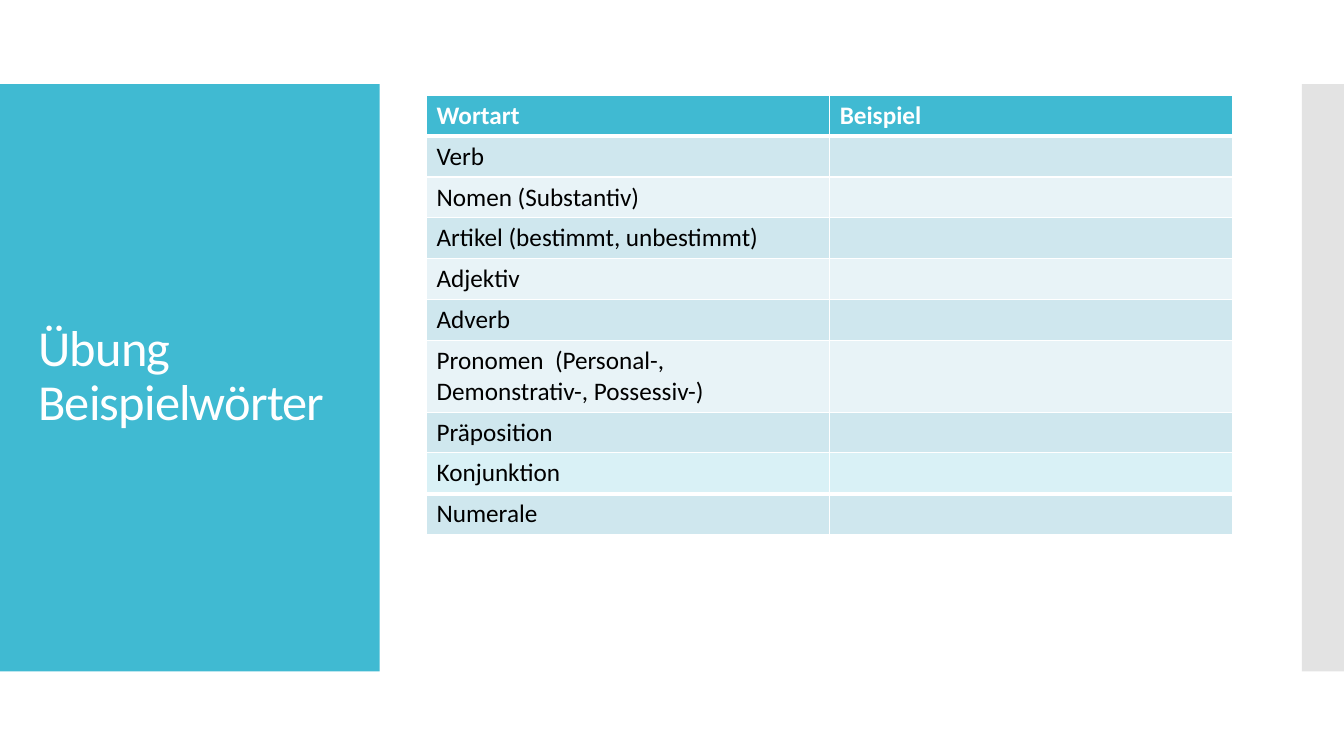
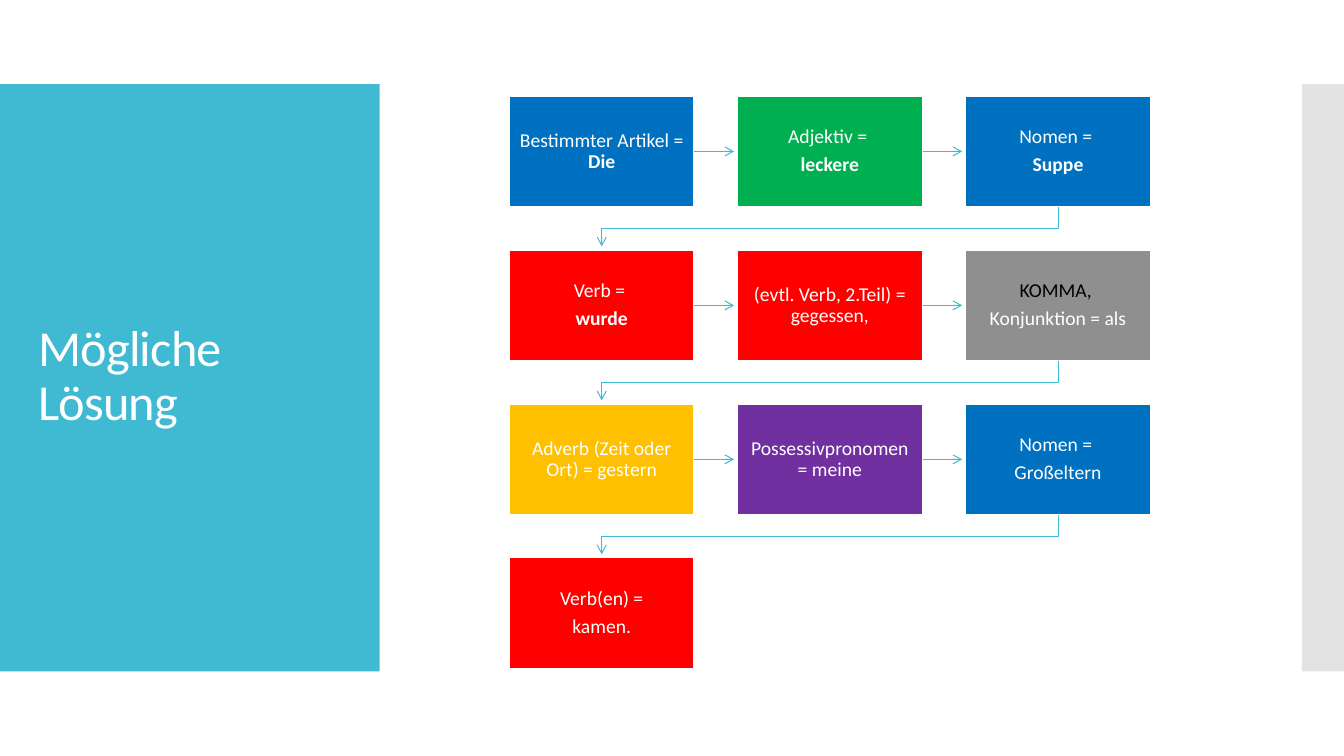
from itertools import product

from lxml.etree import SubElement
from pptx import Presentation
from pptx.dml.color import RGBColor
from pptx.enum.shapes import MSO_CONNECTOR as Connector, MSO_SHAPE as Preset
from pptx.enum.text import MSO_ANCHOR as Anchor, MSO_AUTO_SIZE as AutoSize, PP_ALIGN as Align
from pptx.oxml.ns import qn
from pptx.util import Cm, Pt

# Shared look
FONT = "Calibri"
TEAL, WHITE, BLACK, SIDE_GREY = "40BAD2", "FFFFFF", "000000", "C8C8C8"
DARK_ROW, LIGHT_ROW, PALE_ROW = "CFE7EE", "E8F3F7", "D9F1F6"
BLUE, GREEN, RED = "0070C0", "00B050", "FF0000"
GREY, AMBER, PURPLE = "8F8F8F", "FFC000", "7030A0"
TITLE_FRAME = {"left": Cm(0.71), "top": Cm(3.12), "width": Cm(8.18), "height": Cm(12.78)}

# Table measures in cm
TABLE_LEFT, TABLE_TOP, COLUMN_WIDTH, ROW_HEIGHT, TALL_ROW = 10.75, 2.4, 10.16, 1.03, 1.8

# Sentence chain measures in cm
CHAIN_LEFT, CHAIN_TOP, CARD_WIDTH, CARD_HEIGHT = 12.83, 2.41, 4.67, 2.81
STEP_X, STEP_Y, CARDS_PER_ROW, TIP_GAP = 5.75, 3.88, 3, 0.08

# Each word card: fill and its paragraphs, made of (text, differing format) runs
BOLD = {"bold": True}
WORD_CARDS = [
    (BLUE, [[("Bestimmter Artikel = ", {}), ("Die", BOLD)]]),
    (GREEN, [[("Adjektiv = ", {})], [("leckere", BOLD)]]),
    (BLUE, [[("Nomen = ", {})], [("Suppe", BOLD)]]),
    (RED, [[("Verb = ", {})], [("wurde", BOLD)]]),
    (RED, [[("(evtl. Verb, 2.Teil) = gegessen,", {})]]),
    (GREY, [[("KOMMA, ", {"colour": BLACK})], [("Konjunktion = als", {})]]),
    (AMBER, [[("Adverb (Zeit oder Ort) = gestern", {})]]),
    (PURPLE, [[("Possessivpronomen = meine", {})]]),
    (BLUE, [[("Nomen = ", {})], [("Großeltern", {})]]),
    (RED, [[("Verb(en) =", {})], [("kamen.", {})]]),
]


def rgb(colour):
    return RGBColor.from_string(colour)


def set_all(target, values):
    for attribute, value in values.items():
        setattr(target, attribute, value)


def format_font(font, size, colour=WHITE, bold=False):
    set_all(font, {"name": FONT, "size": Pt(size), "bold": bold})
    font.color.rgb = rgb(colour)


def add_rectangle(slide, left, top, width, height, fill):
    rectangle = slide.shapes.add_shape(Preset.RECTANGLE, Cm(left), Cm(top), Cm(width), Cm(height))
    rectangle.shadow.inherit = False
    rectangle.fill.solid()
    rectangle.fill.fore_color.rgb = rgb(fill)
    rectangle.line.fill.background()
    return rectangle


# Bands and title
def prepare_layout(layout, slide):
    """Give the layout its title frame and both bands, which are drawn on a slide first."""
    set_all(layout.placeholders[0], TITLE_FRAME)
    title_band = add_rectangle(slide, 0, 2.12, 9.57, 14.8, TEAL)
    side_band = add_rectangle(slide, 32.81, 2.12, 1.06, 14.8, SIDE_GREY)
    side_colour = side_band.fill._xPr.find(".//" + qn("a:srgbClr"))
    SubElement(side_colour, qn("a:alpha"), val="50000")
    for band in (side_band, title_band):
        layout.shapes._spTree.insert(2, band._element)


def write_title(slide, wording):
    frame = slide.shapes.title.text_frame
    frame.text = wording
    set_all(frame, {"vertical_anchor": Anchor.MIDDLE, "word_wrap": True, "auto_size": AutoSize.NONE})
    heading = frame.paragraphs[0]
    set_all(heading, {"alignment": Align.LEFT, "line_spacing": 0.9})
    for run in heading.runs:
        format_font(run.font, 36)
        run._r.get_or_add_rPr().set("spc", "-60")


# Word class tables
def add_borders(cell, bottom_width):
    properties = cell._tc.get_or_add_tcPr()
    widths = {"a:lnL": 1, "a:lnR": 1, "a:lnT": 1, "a:lnB": bottom_width}
    for position, (side, width) in enumerate(widths.items()):
        border = SubElement(properties, qn(side), w=str(Pt(width)))
        SubElement(SubElement(border, qn("a:solidFill")), qn("a:srgbClr"), val=WHITE)
        properties.insert(position, border)


def add_word_table(slide, top, rows, heading=False):
    """Rows are (left cell text, fill, height); a thick line follows the first."""
    total = sum(height for _, _, height in rows)
    table = slide.shapes.add_table(
        len(rows), 2, Cm(TABLE_LEFT), Cm(top), Cm(2 * COLUMN_WIDTH), Cm(total)).table
    for index, (words, fill, height) in enumerate(rows):
        table.rows[index].height = Cm(height)
        is_heading = heading and index == 0
        for cell, wording in zip(table.rows[index].cells, (words, "Beispiel" if is_heading else "")):
            cell.text = wording
            cell.fill.solid()
            cell.fill.fore_color.rgb = rgb(fill)
            add_borders(cell, 3 if index == 0 else 1)
            format_font(cell.text_frame.paragraphs[0].font, 18,
                        WHITE if is_heading else BLACK, is_heading)
            for run in cell.text_frame.paragraphs[0].runs:
                format_font(run.font, 18, WHITE if is_heading else BLACK, is_heading)
    return top + total


def add_exercise(slide):
    write_title(slide, "Übung\vBeispielwörter")
    word_classes = ["Verb", "Nomen (Substantiv)", "Artikel (bestimmt, unbestimmt)", "Adjektiv",
                    "Adverb", "Pronomen  (Personal-, Demonstrativ-, Possessiv-)", "Präposition"]
    rows = [("Wortart", TEAL, ROW_HEIGHT)]
    for index, words in enumerate(word_classes):
        rows.append((words, LIGHT_ROW if index % 2 else DARK_ROW,
                     TALL_ROW if words.startswith("Pronomen") else ROW_HEIGHT))
    bottom = add_word_table(slide, TABLE_TOP, rows, heading=True)
    add_word_table(slide, bottom, [("Konjunktion", PALE_ROW, ROW_HEIGHT),
                                   ("Numerale", DARK_ROW, ROW_HEIGHT)])


# Sentence chain
def add_word_card(slide, left, top, fill, paragraphs):
    card = add_rectangle(slide, left, top, CARD_WIDTH, CARD_HEIGHT, fill)
    card.line.color.rgb = rgb(WHITE)
    card.line.width = Pt(1.35)
    frame = card.text_frame
    set_all(frame, {"word_wrap": True, "vertical_anchor": Anchor.MIDDLE})
    set_all(frame, {"margin_" + side: Cm(0.23) for side in ("left", "top", "right", "bottom")})
    for index, runs in enumerate(paragraphs):
        paragraph = frame.add_paragraph() if index else frame.paragraphs[0]
        set_all(paragraph, {"alignment": Align.CENTER, "line_spacing": 0.9, "space_after": Pt(5)})
        for wording, differences in runs:
            run = paragraph.add_run()
            run.text = wording
            format_font(run.font, 14, **differences)
    return card


def style_arrow(arrow):
    arrow.line.color.rgb = rgb(TEAL)
    arrow.line.width = Pt(0.75)
    SubElement(arrow.line._get_or_add_ln(), qn("a:tailEnd"), type="arrow")
    SubElement(arrow._element.spPr, qn("a:effectLst"))


def add_step_arrow(slide, card):
    """Straight arrow from a card to just before its right neighbour."""
    middle = card.top + card.height // 2
    arrow = slide.shapes.add_connector(
        Connector.STRAIGHT, card.left + card.width, middle,
        card.left + Cm(STEP_X - TIP_GAP), middle)
    arrow.begin_connect(card, 3)
    style_arrow(arrow)


def add_return_arrow(slide, card):
    """Bent arrow from the last card of a row to the first card of the next."""
    start_x, start_y = card.left + card.width // 2, card.top + card.height
    end_x = start_x - Cm(STEP_X * (CARDS_PER_ROW - 1))
    bend_y = start_y + Cm((STEP_Y - CARD_HEIGHT) / 2)
    end_y = card.top + Cm(STEP_Y - TIP_GAP)
    outline = slide.shapes.build_freeform(start_x, start_y)
    outline.add_line_segments([(start_x, bend_y), (end_x, bend_y), (end_x, end_y)], close=False)
    arrow = outline.convert_to_shape()
    arrow.fill.background()
    style_arrow(arrow)


def add_solution(slide):
    write_title(slide, "Mögliche Lösung")
    places = product(range(4), range(CARDS_PER_ROW))
    for number, ((row, column), (fill, paragraphs)) in enumerate(zip(places, WORD_CARDS), 1):
        card = add_word_card(slide, CHAIN_LEFT + column * STEP_X, CHAIN_TOP + row * STEP_Y,
                             fill, paragraphs)
        if number == len(WORD_CARDS):
            break
        if column == CARDS_PER_ROW - 1:
            add_return_arrow(slide, card)
        else:
            add_step_arrow(slide, card)


def main():
    deck = Presentation()
    set_all(deck, {"slide_width": Cm(33.87), "slide_height": Cm(19.05)})
    layout = deck.slide_layouts[5]
    exercise, solution = (deck.slides.add_slide(layout) for _ in range(2))
    prepare_layout(layout, exercise)
    add_exercise(exercise)
    add_solution(solution)
    deck.save("out.pptx")


if __name__ == "__main__":
    main()
